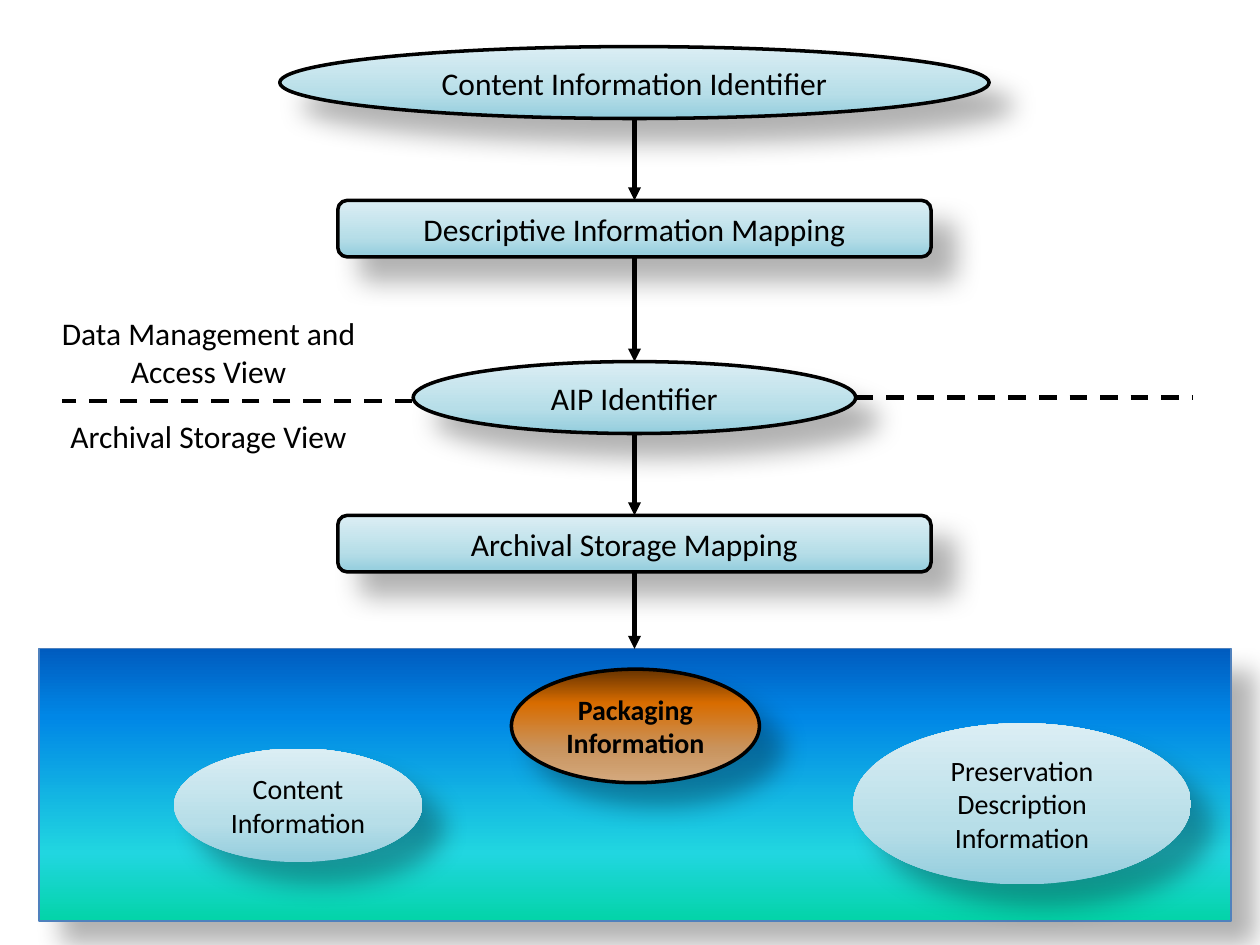
from dataclasses import dataclass

from lxml import etree
from pptx import Presentation
from pptx import util as u
from pptx.dml.color import RGBColor
from pptx.enum import dml, shapes, text
from pptx.oxml import ns


@dataclass(frozen=True)
class Theme:
    font: str = "Calibri"
    ink: str = "000000"
    band_line: str = "4F81BD"
    label_size: int = 18
    small_size: int = 16
    outline: float = 2
    connector: float = 2.5
    # Gradient stops run from the bottom edge to the top: (percent, colour)
    pale: tuple = ((0, "93CDDD"), (35, "B7DEE8"), (100, "DBEEF4"))
    ocean: tuple = ((0, "03D4A8"), (25, "21D6E0"), (75, "0087E6"), (100, "005CBF"))
    copper: tuple = ((0, "D4A97E"), (30, "C9945E"), (70, "D86C00"), (100, "663300"))


THEME = Theme()
OVAL = shapes.MSO_SHAPE.OVAL
ROUNDED = shapes.MSO_SHAPE.ROUNDED_RECTANGLE
AXIS = 12.79  # centre line of the flow, in cm


def add_child(parent, tag, **attributes):
    return etree.SubElement(parent, ns.qn(tag), attributes)


def fill_gradient(shape, stops):
    shape.fill.gradient()
    shape.fill.gradient_angle = 90
    stop_list = shape._element.spPr.find(".//" + ns.qn("a:gsLst"))
    for stop in list(stop_list):
        stop_list.remove(stop)
    for percent, colour in stops:
        stop = add_child(stop_list, "a:gs", pos=str(percent * 1000))
        add_child(stop, "a:srgbClr", val=colour)


def add_shadow(shape):
    shape.shadow.inherit = False
    effects = shape._element.spPr.find(ns.qn("a:effectLst"))
    shadow = add_child(effects, "a:outerShdw", blurRad=str(u.Pt(15)),
                       dist=str(u.Pt(18)), dir=str(45 * 60000), rotWithShape="0")
    colour = add_child(shadow, "a:srgbClr", val=THEME.ink)
    add_child(colour, "a:alpha", val="30000")


def write_text(shape, lines, size, bold=False):
    frame = shape.text_frame
    frame.word_wrap = True
    frame.text = "\n".join(lines)
    for paragraph in frame.paragraphs:
        paragraph.alignment = text.PP_ALIGN.CENTER
        paragraph.font.name = THEME.font
        paragraph.font.size = u.Pt(size)
        paragraph.font.bold = bold
        paragraph.font.color.rgb = RGBColor.from_string(THEME.ink)


def add_node(slide, kind, box, stops, lines=(), size=THEME.label_size, bold=False,
             line=THEME.ink, width=THEME.outline):
    shape = slide.shapes.add_shape(kind, *map(u.Cm, box))
    fill_gradient(shape, stops)
    if line:
        shape.line.color.rgb = RGBColor.from_string(line)
        shape.line.width = u.Pt(width)
    else:
        shape.line.fill.background()
    add_shadow(shape)
    if lines:
        write_text(shape, lines, size, bold)
        shape.text_frame.vertical_anchor = text.MSO_ANCHOR.MIDDLE


def add_line(slide, start, end, arrow=False, dashed=False):
    connector = slide.shapes.add_connector(
        shapes.MSO_CONNECTOR.STRAIGHT, *map(u.Cm, start + end))
    connector.line.color.rgb = RGBColor.from_string(THEME.ink)
    connector.line.width = u.Pt(THEME.connector)
    if dashed:
        connector.line.dash_style = dml.MSO_LINE.DASH
    if arrow:
        add_child(connector.line._get_or_add_ln(), "a:tailEnd", type="triangle")
    add_child(connector._element.spPr, "a:effectLst")


def add_label(slide, box, label):
    write_text(slide.shapes.add_textbox(*map(u.Cm, box)), [label], THEME.label_size)


def main():
    presentation = Presentation()
    presentation.slide_width, presentation.slide_height = u.Cm(25.4), u.Cm(19.05)
    slide = presentation.slides.add_slide(presentation.slide_layouts[6])

    # Archival package band
    band_top = 13.08
    add_node(slide, shapes.MSO_SHAPE.RECTANGLE, (0.79, band_top, 24.03, 5.49),
             THEME.ocean, line=THEME.band_line, width=0.75)

    # Flow from identifier to package: kind, top, width, height, label
    steps = [
        (OVAL, 0.94, 14.3, 1.45, "Content Information Identifier"),
        (ROUNDED, 4.04, 11.96, 1.14, "Descriptive Information Mapping"),
        (OVAL, 7.29, 8.92, 1.45, "AIP Identifier"),
        (ROUNDED, 10.39, 11.96, 1.14, "Archival Storage Mapping"),
    ]
    for kind, top, width, height, label in steps:
        add_node(slide, kind, (AXIS - width / 2, top, width, height), THEME.pale, [label])

    # Arrows from each step to the next, the last one to the band
    next_tops = [step[1] for step in steps[1:]] + [band_top]
    for (_, top, _, height, _), next_top in zip(steps, next_tops):
        add_line(slide, (AXIS, top + height), (AXIS, next_top), arrow=True)

    # Divider between the two views
    add_line(slide, (17.25, 8.01), (24.05, 8.01), dashed=True)
    add_line(slide, (8.31, 8.08), (1.24, 8.08), dashed=True)
    add_label(slide, (0.79, 8.28, 6.83, 1.02), "Archival Storage View")
    add_label(slide, (0.79, 6.2, 6.83, 1.8), "Data Management and Access View")

    # Contents of the package
    add_node(slide, OVAL, (10.31, 13.49, 5, 2.29), THEME.copper,
             ["Packaging Information"], THEME.small_size, bold=True)
    add_node(slide, OVAL, (17.2, 14.58, 6.81, 3.25), THEME.pale,
             ["Preservation Description", "Information"], THEME.small_size, line=None)
    add_node(slide, OVAL, (3.51, 15.09, 5, 2.29), THEME.pale,
             ["Content Information"], THEME.small_size, line=None)

    presentation.save("out.pptx")


if __name__ == "__main__":
    main()
